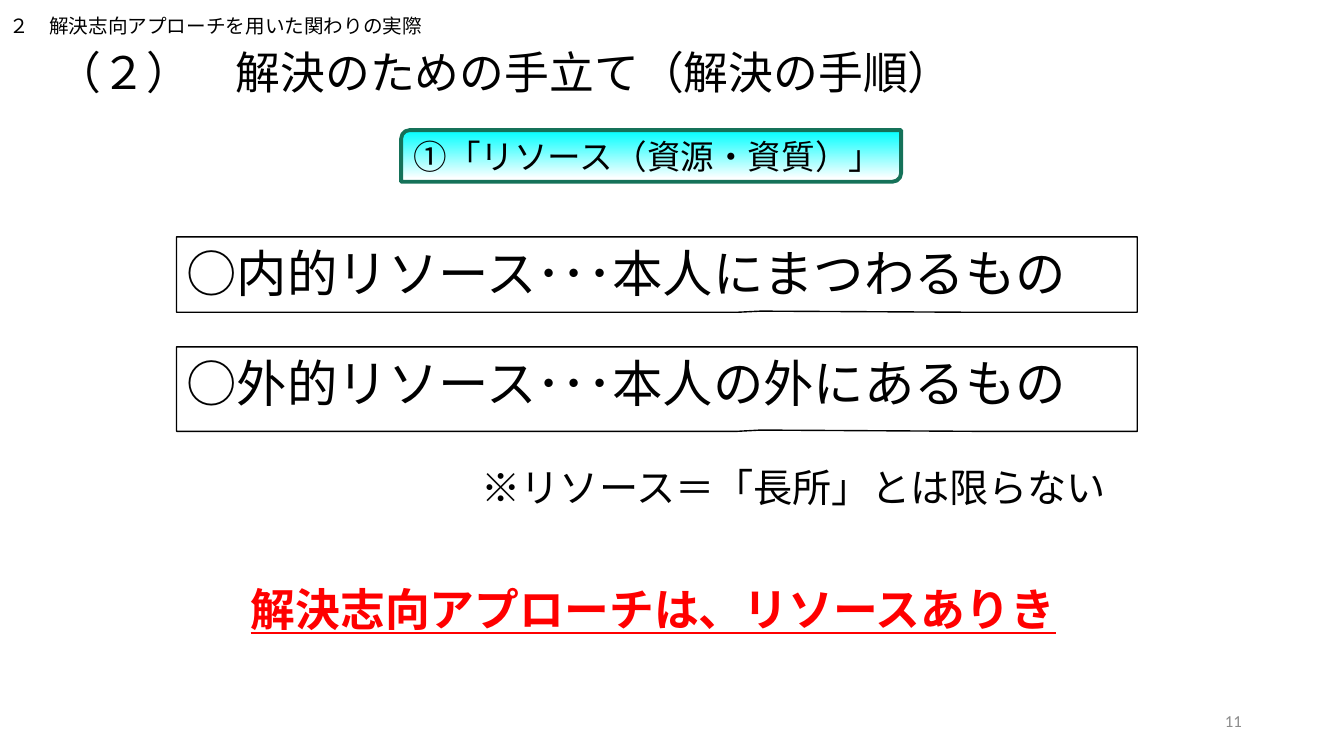
from lxml.etree import SubElement
from pptx import Presentation
from pptx.dml.color import RGBColor
from pptx.enum.shapes import MSO_SHAPE as Shape
from pptx.enum.text import MSO_ANCHOR as Anchor, MSO_AUTO_SIZE as AutoSize, PP_ALIGN as Align
from pptx.oxml.ns import qn
from pptx.util import Cm, Pt


def color(value):
    return RGBColor.from_string(value)


class Page:
    japanese = "Noto Sans CJK JP"
    latin = "Calibri"
    ink = "000000"

    def __init__(self, deck):
        self.page = deck.slides.add_slide(deck.slide_layouts[5])

    def fill_text(self, shape, text, size, font=japanese, ink=ink, align=Align.LEFT,
                  anchor=Anchor.TOP, wrap=True):
        frame = shape.text_frame
        frame.auto_size = AutoSize.NONE
        frame.word_wrap = wrap
        frame.vertical_anchor = anchor
        para = frame.paragraphs[0]
        para.text = text
        para.alignment = align
        para.font.name = font
        para.font.size = Pt(size)
        para.font.color.rgb = color(ink)
        if font == self.japanese:
            properties = para.font._element
            SubElement(properties, qn("a:ea")).set("typeface", font)
        return para

    def title(self, place, text, size):
        box = self.page.shapes.title
        box.left, box.top, box.width, box.height = map(Cm, place)
        para = self.fill_text(box, text, size)
        para.line_spacing = 0.9

    def text(self, place, text, size, **style):
        box = self.page.shapes.add_textbox(*map(Cm, place))
        return self.fill_text(box, text, size, **style)

    def shape(self, kind, place, text, size, line=None, width=1, **style):
        shape = self.page.shapes.add_shape(kind, *map(Cm, place))
        shape.shadow.inherit = False
        shape.fill.background()
        if line:
            shape.line.color.rgb = color(line)
            shape.line.width = Pt(width)
        else:
            shape.line.fill.background()
        self.fill_text(shape, text, size, **style)
        return shape

    def callout(self, place, text, size, line=None):
        shape = self.shape(Shape.RECTANGULAR_CALLOUT, place, text, size, line)
        shape.adjustments[0] = 0.108
        shape.adjustments[1] = 0.485

    def label(self, place, text, size):
        shape = self.shape(Shape.ROUND_2_DIAG_RECTANGLE, place, text, size,
                           "157259", 2.75, anchor=Anchor.MIDDLE)
        shape.fill.gradient()
        shape.fill.gradient_angle = 270
        for stop, position, tint in zip(shape.fill.gradient_stops, (0, 0.94), ("00FFFF", "FFFFFF")):
            stop.position = position
            stop.color.rgb = color(tint)


def main():
    deck = Presentation()
    deck.slide_width, deck.slide_height = Cm(33.87), Cm(19.05)
    page = Page(deck)
    page.title((1.17, 1.14, 24.79, 1.27), "（２）　解決のための手立て（解決の手順）", 32)
    page.text((0, 0.23, 10.9, 0.86), "２　解決志向アプローチを用いた関わりの実際", 14,
              font=Page.latin, wrap=False)
    page.label((10.11, 3.28, 12.6, 1.3), "①「リソース（資源・資質）」", 24)
    page.callout((4.45, 5.97, 24.21, 1.9), "○内的リソース･･･本人にまつわるもの　", 36, Page.ink)
    page.callout((4.45, 8.74, 24.21, 2.13), "○外的リソース･･･本人の外にあるもの　", 36, Page.ink)
    page.callout((11.89, 11.56, 17.45, 1.65), "※リソース＝「長所」とは限らない", 28)
    conclusion = page.text((6.07, 14.53, 21.67, 2.11), "解決志向アプローチは、リソースありき", 32,
                           ink="FF0000")
    conclusion.font.bold = True
    conclusion.font.underline = True
    page.text((23.93, 17.65, 7.62, 1.02), "11", 12, font=Page.latin, ink="8C8C8C",
              align=Align.RIGHT, anchor=Anchor.MIDDLE)
    deck.save("out.pptx")


if __name__ == "__main__":
    main()
